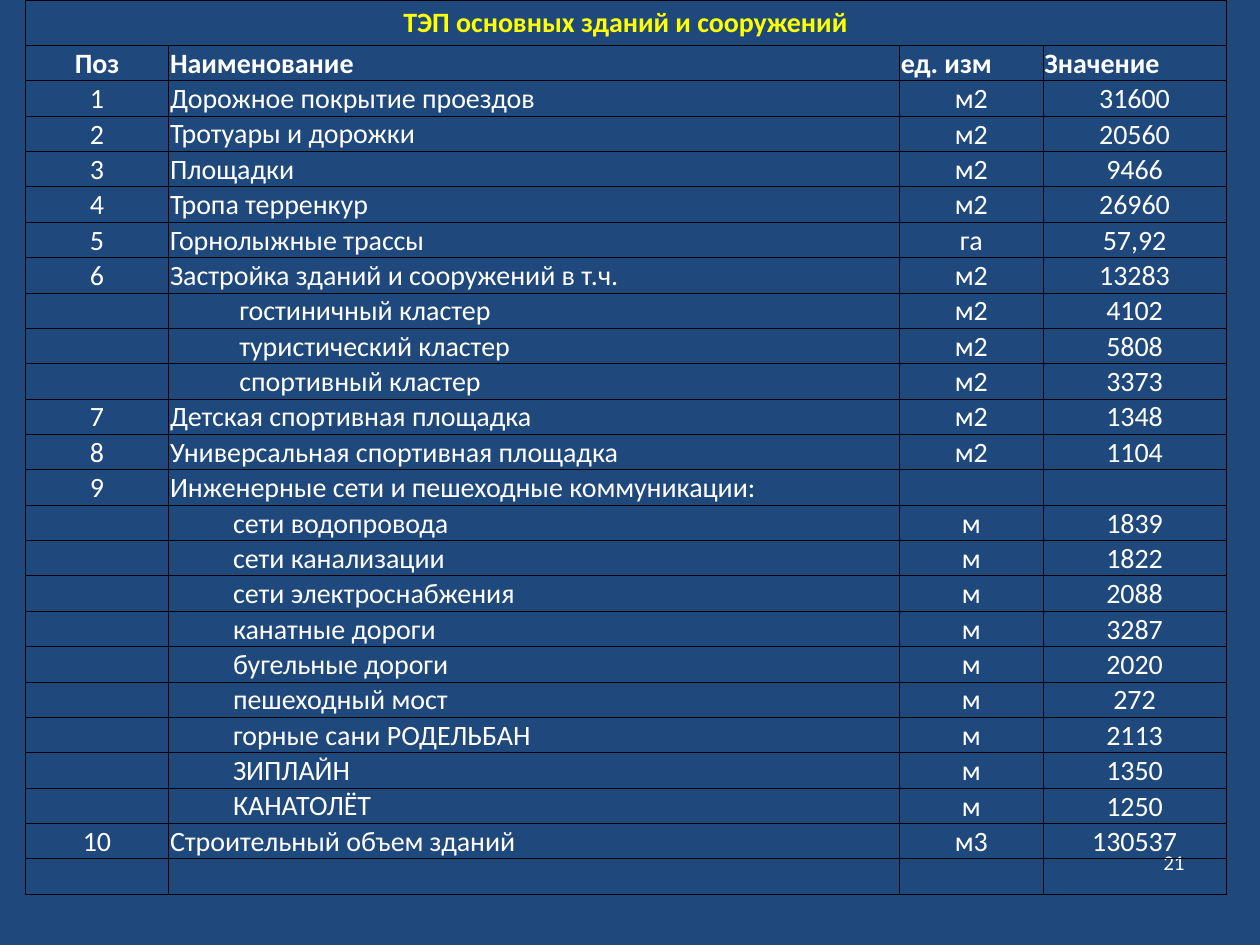
"""Build a slide with the table of key figures for buildings and structures."""
from lxml.etree import SubElement
from pptx import Presentation
from pptx.dml.color import RGBColor
from pptx.enum.text import MSO_ANCHOR, PP_ALIGN
from pptx.oxml.ns import qn
from pptx.util import Inches, Pt

THEME = {
    "back": RGBColor.from_string("1F497D"),
    "text": RGBColor.from_string("FFFFFF"),
    "title": RGBColor.from_string("FFFF00"),
    "rule": "000000",
    "font": "Calibri",
    "body": Pt(16),
    "small": Pt(12),
    "line": Pt(0.5),
}
PAD, SUB, DEEP = 0.01, 0.51, 0.56
ROWS = [
    ("ТЭП основных зданий и сооружений", "", "", "", PAD),
    ("Поз", "Наименование", "ед. изм", "Значение", PAD),
    ("1", "Дорожное покрытие проездов", "м2", "31600", PAD),
    ("2", "Тротуары и дорожки", "м2", "20560", PAD),
    ("3", "Площадки", "м2", "9466", PAD),
    ("4", "Тропа терренкур", "м2", "26960", PAD),
    ("5", "Горнолыжные трассы", "га", "57,92", PAD),
    ("6", "Застройка зданий и сооружений в т.ч.", "м2", "13283", PAD),
    ("", "гостиничный кластер", "м2", "4102", DEEP),
    ("", "туристический кластер", "м2", "5808", DEEP),
    ("", "спортивный кластер", "м2", "3373", DEEP),
    ("7", "Детская спортивная площадка", "м2", "1348", PAD),
    ("8", "Универсальная спортивная площадка", "м2", "1104", PAD),
    ("9", "Инженерные сети и пешеходные коммуникации:", "", "", PAD),
    ("", "сети водопровода", "м", "1839", SUB),
    ("", "сети канализации", "м", "1822", SUB),
    ("", "сети электроснабжения", "м", "2088", SUB),
    ("", "канатные дороги", "м", "3287", SUB),
    ("", "бугельные дороги", "м", "2020", SUB),
    ("", "пешеходный мост", "м", "272", SUB),
    ("", "горные сани РОДЕЛЬБАН", "м", "2113", SUB),
    ("", "ЗИПЛАЙН", "м", "1350", SUB),
    ("", "КАНАТОЛЁТ", "м", "1250", SUB),
    ("10", "Строительный объем зданий", "м3", "130537", PAD),
    ("", "", "", "", PAD),
]
WIDTHS = [1.14, 5.8, 1.14, 1.45]
HIGH, TOP = 7.1, 0.36
STEP = (HIGH - TOP) / (len(ROWS) - 1)


def write(para, text, size, color, bold=False):
    run = para.add_run()
    run.text = text
    form = {"name": THEME["font"], "size": size, "bold": bold}
    for key, value in form.items():
        setattr(run.font, key, value)
    run.font.color.rgb = color


def frame(cell):
    props = cell._tc.get_or_add_tcPr()
    for side in ("lnL", "lnR", "lnT", "lnB"):
        line = SubElement(props, qn(f"a:{side}"), w=str(THEME["line"]))
        fill = SubElement(line, qn("a:solidFill"))
        SubElement(fill, qn("a:srgbClr"), val=THEME["rule"])
    cell.fill.background()


deck = Presentation()
deck.slide_width, deck.slide_height = Inches(10), Inches(7.5)
slide = deck.slides.add_slide(deck.slide_layouts[6])
slide.background.fill.solid()
slide.background.fill.fore_color.rgb = THEME["back"]

box = slide.shapes.add_textbox(Inches(7.17), Inches(6.64), Inches(2.33), Inches(0.4))
box.text_frame.word_wrap = True
box.text_frame.vertical_anchor = MSO_ANCHOR.MIDDLE
page = box.text_frame.paragraphs[0]
page.alignment = PP_ALIGN.RIGHT
write(page, "21", THEME["small"], THEME["text"])

table = slide.shapes.add_table(
    len(ROWS), len(WIDTHS), Inches(0.2), Inches(0), Inches(sum(WIDTHS)), Inches(HIGH)
).table
table.first_row = table.horz_banding = False
for col, width in zip(table.columns, WIDTHS):
    col.width = Inches(width)

for r, (*texts, indent) in enumerate(ROWS):
    table.rows[r].height = Inches(STEP if r else TOP)
    for c, text in enumerate(texts):
        cell = table.cell(r, c)
        frame(cell)
        form = {
            "margin_left": Inches(indent if c == 1 else PAD),
            "margin_right": Inches(PAD),
            "margin_top": Inches(PAD),
            "margin_bottom": Inches(0),
            "vertical_anchor": MSO_ANCHOR.BOTTOM if c == 1 and r > 1 else MSO_ANCHOR.MIDDLE,
        }
        for key, value in form.items():
            setattr(cell, key, value)
        para = cell.text_frame.paragraphs[0]
        left = c == 1 or (r == 1 and c > 0)
        para.alignment = PP_ALIGN.LEFT if left else PP_ALIGN.CENTER
        if text:
            color = THEME["text"] if r else THEME["title"]
            write(para, text, THEME["body"], color, r < 2)
        else:
            size = str(int(THEME["body"].pt * 100))
            SubElement(para._p, qn("a:endParaRPr"), sz=size)

table.cell(0, 0).merge(table.cell(0, len(WIDTHS) - 1))
deck.save("out.pptx")
